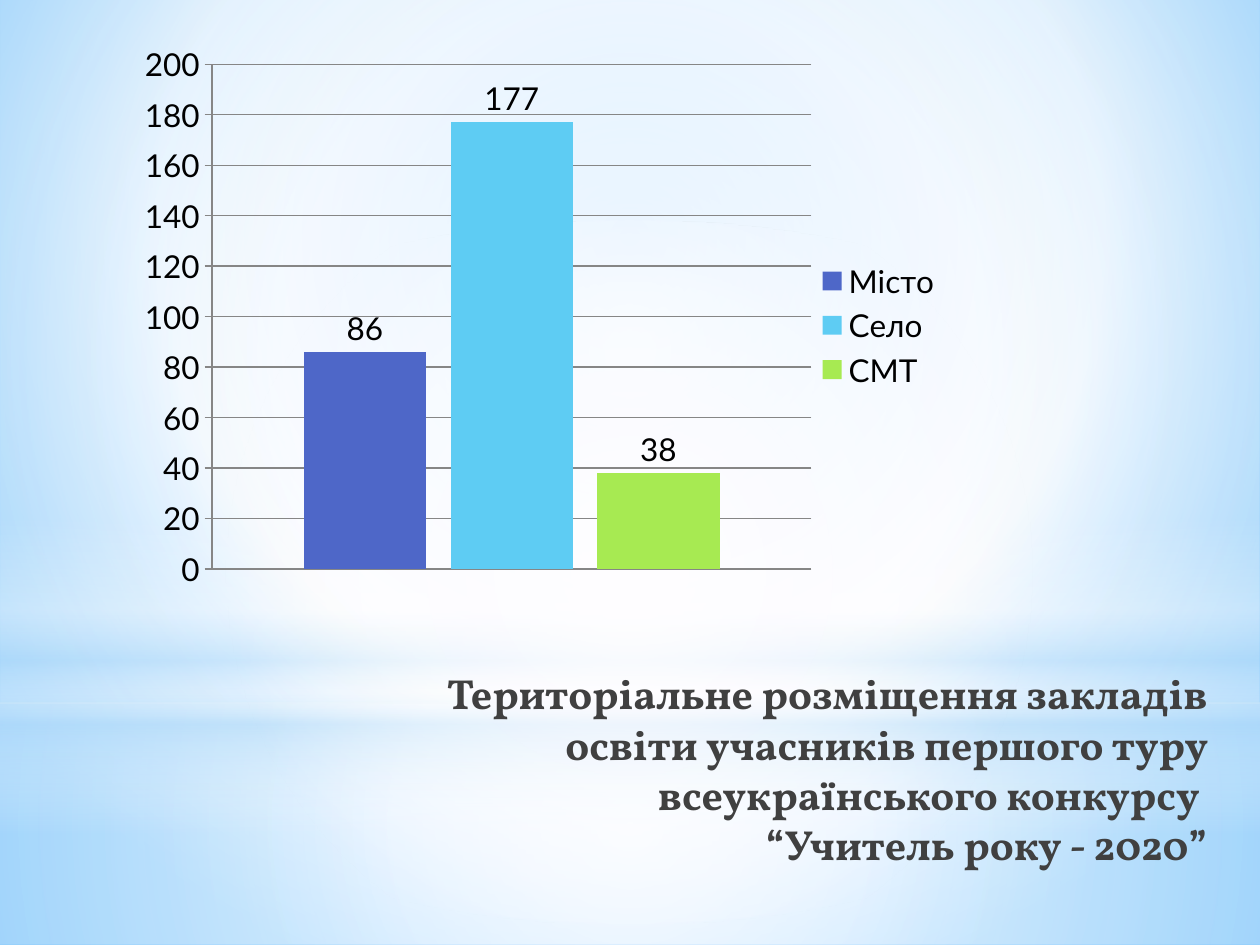
from dataclasses import dataclass

from pptx import Presentation
from pptx.chart.data import CategoryChartData
from pptx.dml.color import RGBColor
from pptx.enum.chart import XL_CHART_TYPE as ChartType
from pptx.enum.chart import XL_LABEL_POSITION as LabelPosition
from pptx.enum.chart import XL_LEGEND_POSITION as LegendPosition
from pptx.enum.chart import XL_TICK_MARK as TickMark
from pptx.enum.shapes import MSO_SHAPE as Preset
from pptx.enum.text import MSO_ANCHOR, PP_ALIGN
from pptx.oxml import parse_xml
from pptx.oxml.ns import nsdecls, qn
from pptx.util import Inches, Pt


@dataclass(frozen=True)
class Theme:
    white: str = "FFFEFF"
    pale: str = "B4DCFA"
    title: str = "404040"
    black: str = "000000"
    grid: str = "868686"
    bars: tuple = ("4E67C8", "5ECCF3", "A7EA52")
    title_font: str = "Vollkorn"
    chart_font: str = "Lato"
    title_size: int = 24
    chart_size: int = 18


theme = Theme()


def fill_gradient(holder, stops, center=None):
    """Swap the solid fill for (position, colour, alpha) stops in percent; linear downwards without a center."""
    marks = "".join(
        f'<a:gs pos="{pos * 1000}"><a:srgbClr val="{color}">'
        f'<a:alpha val="{alpha * 1000}"/></a:srgbClr></a:gs>'
        for pos, color, alpha in stops
    )
    if center:
        sides = " ".join(f'{side}="{value * 1000}"' for side, value in zip("ltrb", center))
        shade = f'<a:path path="circle"><a:fillToRect {sides}/></a:path>'
    else:
        shade = '<a:lin ang="5400000" scaled="0"/>'
    gradient = parse_xml(
        f'<a:gradFill {nsdecls("a")} rotWithShape="1"><a:gsLst>{marks}</a:gsLst>{shade}</a:gradFill>'
    )
    holder.replace(holder.find(qn("a:solidFill")), gradient)


def add_text(slide, text, left, top, width, height, *, font, size, color, bold=False, align=PP_ALIGN.LEFT):
    box = slide.shapes.add_textbox(Inches(left), Inches(top), Inches(width), Inches(height))
    frame = box.text_frame
    frame.word_wrap = True
    frame.vertical_anchor = MSO_ANCHOR.TOP
    para = frame.paragraphs[0]
    para.text = text
    para.alignment = align
    for span in para.runs:
        span.font.name = font
        span.font.size = Pt(size)
        span.font.bold = bold
        span.font.color.rgb = RGBColor.from_string(color)


deck = Presentation()
deck.slide_width, deck.slide_height = Inches(10), Inches(7.5)
slide = deck.slides.add_slide(deck.slide_layouts[6])

# Background and its translucent layers
slide.background.fill.solid()
fill_gradient(
    slide.element.find(".//" + qn("p:bgPr")),
    [(0, "9ED5FF", 100), (60, "FFFFFF", 100), (100, "5BB9FF", 100)],
    center=(20, 10, 20, 60),
)
middle = (50, 50, 50, 50)
white, pale = theme.white, theme.pale
layers = [
    (Preset.RECTANGLE, 5.58, 1.92, [(0, white, 91), (37, white, 76), (100, pale, 79)], middle),
    (Preset.RECTANGLE, 0, 5.58, [(0, white, 89), (48, white, 62), (100, pale, 79)], middle),
    (Preset.RECTANGLE, 4.12, 2.5, [(0, white, 0), (29, white, 30), (45, pale, 40),
                                   (55, white, 26), (65, pale, 60), (100, white, 0)], None),
    (Preset.OVAL, 1.75, 5.58, [(0, white, 100), (56, white, 0)], middle),
]
for preset, top, height, stops, center in layers:
    layer = slide.shapes.add_shape(preset, 0, Inches(top), deck.slide_width, Inches(height))
    layer.shadow.inherit = False
    layer.line.fill.background()
    layer.fill.solid()
    fill_gradient(layer.element.spPr, stops, center)

# Title
add_text(
    slide,
    "Територіальне розміщення закладів освіти учасників першого туру "
    "всеукраїнського конкурсу \v“Учитель року - 2020”",
    2.56, 5.25, 7.12, 1.25,
    font=theme.title_font, size=theme.title_size, color=theme.title, bold=True, align=PP_ALIGN.RIGHT,
)

# Chart
data = CategoryChartData()
data.categories = ["1"]
for name, value in [("Місто", 86), ("Село", 177), ("СМТ", 38)]:
    data.add_series(name, [value])
chart = slide.shapes.add_chart(
    ChartType.COLUMN_CLUSTERED, Inches(0.91), Inches(0.36), Inches(6.67), Inches(4.44), data
).chart
chart.has_title = False
chart.font.name = theme.chart_font
chart.font.size = Pt(theme.chart_size)
chart.font.color.rgb = RGBColor.from_string(theme.black)
chart.has_legend = True
chart.legend.position = LegendPosition.RIGHT
chart.legend.include_in_layout = False

chart.category_axis.visible = False
value_axis = chart.value_axis
value_axis.minimum_scale, value_axis.maximum_scale, value_axis.major_unit = 0, 200, 20
value_axis.major_tick_mark = TickMark.OUTSIDE
value_axis.has_major_gridlines = True
for line in (value_axis.format.line, value_axis.major_gridlines.format.line):
    line.color.rgb = RGBColor.from_string(theme.grid)
    line.width = Pt(0.75)

plot = chart.plots[0]
plot.gap_width, plot.overlap = 150, -20
plot.vary_by_categories = False
for series, color in zip(plot.series, theme.bars):
    series.format.fill.solid()
    series.format.fill.fore_color.rgb = RGBColor.from_string(color)
    series.data_labels.show_value = True
    series.data_labels.position = LabelPosition.OUTSIDE_END

plot_area = chart.element.find(".//" + qn("c:plotArea"))
for layout in plot_area.findall(qn("c:layout")):
    plot_area.remove(layout)
bounds = "".join(
    f'<c:{key} val="{value}"/>' for key, value in zip("xywh", (0.116, 0.033, 0.713, 0.903))
)
plot_area.insert(0, parse_xml(
    f'<c:layout {nsdecls("c")}><c:manualLayout><c:layoutTarget val="inner"/>'
    f'<c:xMode val="edge"/><c:yMode val="edge"/>{bounds}</c:manualLayout></c:layout>'
))

deck.save("out.pptx")
